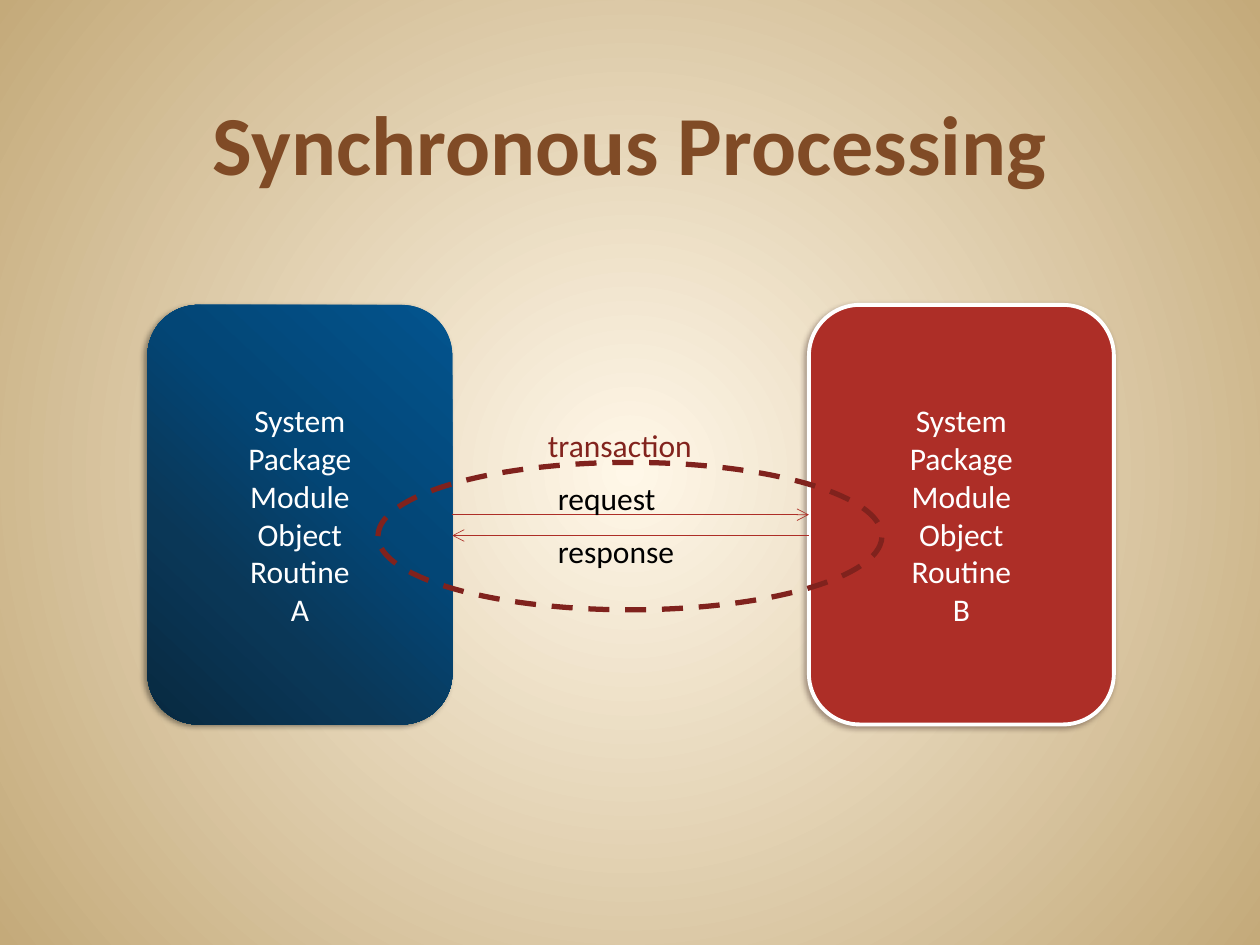
"""Build the Synchronous Processing slide."""
from lxml import etree
from pptx import Presentation
from pptx.dml.color import RGBColor
from pptx.enum import dml, shapes, text
from pptx.oxml import ns, parse_xml
from pptx.util import Inches, Pt

COLORS = {
    "title": "804B26", "red": "AD2E27", "dash": "80221D", "note": "82231D",
    "white": "FFFFFF", "black": "000000", "red_shadow": "1A0000",
    "glow": "FFF7E8", "sand": "C4AA7A",
}
BLUES = [(0, "03548E"), (40, "034676"), (70, "0A3757"), (100, "082940")]
TITLE = "Synchronous Processing"
LEVELS = ["System", "Package", "Module", "Object", "Routine"]
SYSTEMS = [
    {"name": "A", "left": 1.17, "shadow": ("black", 40)},
    {"name": "B", "left": 6.42, "shadow": ("red_shadow", 35)},
]
BLOCK_TOP, BLOCK_WIDTH, BLOCK_HEIGHT = 2.42, 2.42, 3.33
RESPONSE_Y = 4.25
LABELS = [
    ("request", (4.33, 3.75, 1.17, 0.4), "black"),
    ("response", (4.33, 4.17, 1.33, 0.4), "black"),
]
TRANSACTION_LABEL = ("transaction", (4.25, 3.33, 1.75, 0.42), "note")
TRANSACTION_OVAL = (3, 3.67, 4, 1.17)


def rgb(name):
    return RGBColor.from_string(COLORS[name])


def gradient(stops, direction):
    marks = "".join(
        f'<a:gs pos="{place * 1000}"><a:srgbClr val="{color}"/></a:gs>'
        for place, color in stops
    )
    return parse_xml(
        f'<a:gradFill {ns.nsdecls("a")} rotWithShape="1">'
        f"<a:gsLst>{marks}</a:gsLst>{direction}</a:gradFill>"
    )


def write(frame, lines, color, size=18, align=text.PP_ALIGN.LEFT, bold=False):
    frame.text = "\n".join(lines)
    for para in frame.paragraphs:
        para.alignment = align
        for span in para.runs:
            style = {"name": "Calibri", "size": Pt(size), "bold": bold}
            for key, value in style.items():
                setattr(span.font, key, value)
            span.font.color.rgb = rgb(color)


def add_label(page, words, place, color):
    box = page.shapes.add_textbox(*map(Inches, place))
    box.text_frame.word_wrap = True
    box.text_frame.auto_size = text.MSO_AUTO_SIZE.SHAPE_TO_FIT_TEXT
    write(box.text_frame, [words], color)


def add_system(page, name, left, shadow):
    block = page.shapes.add_shape(
        shapes.MSO_SHAPE.ROUNDED_RECTANGLE,
        *map(Inches, (left, BLOCK_TOP, BLOCK_WIDTH, BLOCK_HEIGHT)),
    )
    block.fill.solid()
    block.fill.fore_color.rgb = rgb("red")
    block.line.color.rgb = rgb("white")
    block.line.width = Pt(2.21)
    block.shadow.inherit = False
    color, opacity = shadow
    effects = block._element.spPr.find(ns.qn("a:effectLst"))
    effects.append(parse_xml(
        f'<a:outerShdw {ns.nsdecls("a")} blurRad="{Pt(3.1)}" dist="{Pt(2)}" '
        f'dir="{150 * 60000}" algn="tl" rotWithShape="0">'
        f'<a:srgbClr val="{COLORS[color]}"><a:alpha val="{opacity * 1000}"/>'
        "</a:srgbClr></a:outerShdw>"
    ))
    block.text_frame.vertical_anchor = text.MSO_ANCHOR.MIDDLE
    write(block.text_frame, LEVELS + [name], "white", align=text.PP_ALIGN.CENTER)
    return block


def add_arrow(page, start, end):
    arrow = page.shapes.add_connector(
        shapes.MSO_CONNECTOR.STRAIGHT, *map(Inches, start + end)
    )
    arrow.line.color.rgb = rgb("red")
    arrow.line.width = Pt(0.39)
    tail = etree.SubElement(arrow.line._get_or_add_ln(), ns.qn("a:tailEnd"))
    tail.set("type", "arrow")
    etree.SubElement(arrow._element.spPr, ns.qn("a:effectLst"))
    return arrow


def main():
    deck = Presentation()
    deck.slide_width, deck.slide_height = Inches(10), Inches(7.5)
    page = deck.slides.add_slide(deck.slide_layouts[5])

    page.background.fill.solid()
    solid = page._element.cSld.find(".//" + ns.qn("a:solidFill"))
    circle = (
        '<a:path path="circle"><a:fillToRect l="50000" t="50000" '
        'r="50000" b="50000"/></a:path>'
    )
    stops = [(0, COLORS["glow"]), (100, COLORS["sand"])]
    solid.getparent().replace(solid, gradient(stops, circle))

    title = page.shapes.title
    place = {"left": 0.5, "top": 0.33, "width": 9, "height": 1.25}
    for key, value in place.items():
        setattr(title, key, Inches(value))
    title.text_frame.vertical_anchor = text.MSO_ANCHOR.BOTTOM
    write(title.text_frame, [TITLE], "title", 48, text.PP_ALIGN.CENTER, True)

    caller, callee = [add_system(page, **system) for system in SYSTEMS]
    caller.line.fill.background()
    blue = caller._element.spPr.find(ns.qn("a:solidFill"))
    slope = f'<a:lin ang="{133 * 60000}" scaled="0"/>'
    blue.getparent().replace(blue, gradient(BLUES, slope))

    near = SYSTEMS[0]["left"] + BLOCK_WIDTH
    far = SYSTEMS[1]["left"]
    middle = BLOCK_TOP + BLOCK_HEIGHT / 2
    request = add_arrow(page, (near, middle), (far, middle))
    request.begin_connect(caller, 3)
    request.end_connect(callee, 1)
    add_arrow(page, (far, RESPONSE_Y), (near, RESPONSE_Y))

    for label in LABELS:
        add_label(page, *label)
    oval = page.shapes.add_shape(
        shapes.MSO_SHAPE.OVAL, *map(Inches, TRANSACTION_OVAL)
    )
    oval.fill.background()
    oval.line.color.rgb = rgb("dash")
    oval.line.width = Pt(3)
    oval.line.dash_style = dml.MSO_LINE.DASH
    oval.shadow.inherit = False
    add_label(page, *TRANSACTION_LABEL)

    deck.save("out.pptx")


if __name__ == "__main__":
    main()
